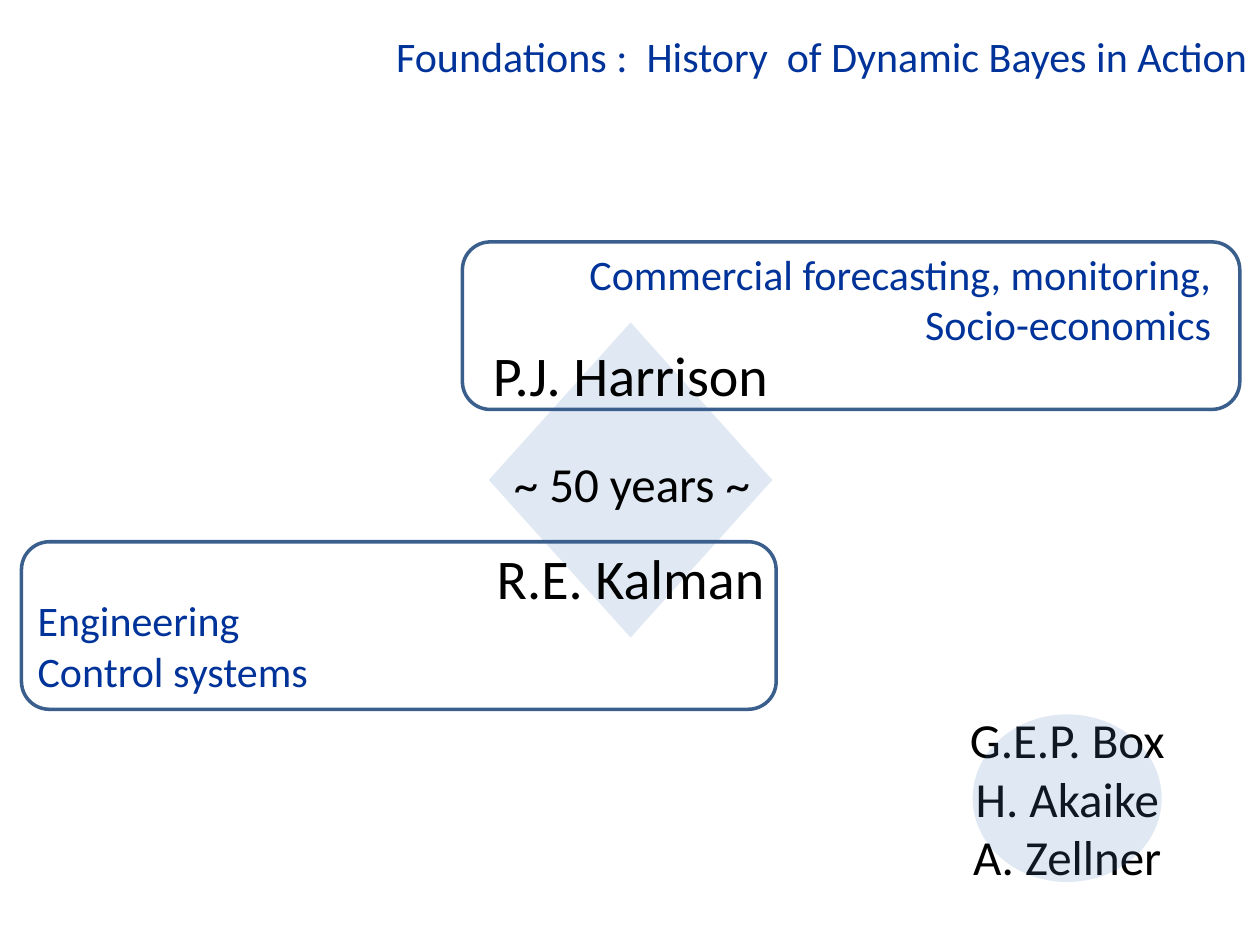
from lxml import etree
from pptx import Presentation
from pptx.dml.color import RGBColor
from pptx.enum.shapes import MSO_SHAPE
from pptx.enum.text import MSO_ANCHOR, PP_ALIGN
from pptx.oxml.ns import qn
from pptx.util import Inches, Pt

LEFT, CENTER, RIGHT = PP_ALIGN.LEFT, PP_ALIGN.CENTER, PP_ALIGN.RIGHT
TOP = MSO_ANCHOR.TOP
DIAMOND, ELLIPSE = MSO_SHAPE.DIAMOND, MSO_SHAPE.OVAL
ROUNDED = MSO_SHAPE.ROUNDED_RECTANGLE

FONT = "Calibri"
NAVY, BLACK, TINT, OUTLINE = "003399", "000000", "4F81BD", "3A5F8C"
TINT_OPACITY = 18
TITLE_ONLY = 5


def color(hex_string):
    return RGBColor.from_string(hex_string)


def inches(box):
    return [Inches(v) for v in box]


def write(tf, lines, size, hex_string, align, gap=0):
    """Fill a text frame, one paragraph per line, gap points apart."""
    tf.word_wrap = True
    tf.vertical_anchor = TOP
    for i, line in enumerate(lines):
        p = tf.paragraphs[0] if i == 0 else tf.add_paragraph()
        p.text = line
        p.alignment = align
        p.space_before = Pt(gap if i else 0)
        p.font.name = FONT
        p.font.size = Pt(size)
        p.font.color.rgb = color(hex_string)


def add_text(s, box, lines, size, hex_string, align, gap=0):
    tb = s.shapes.add_textbox(*inches(box))
    write(tb.text_frame, lines, size, hex_string, align, gap)


def add_tint(s, kind, box):
    """Add a see-through shape without a line."""
    sp = s.shapes.add_shape(kind, *inches(box))
    sp.shadow.inherit = False
    sp.fill.solid()
    sp.fill.fore_color.rgb = color(TINT)
    sp.line.fill.background()
    clr = sp.fill._xPr.find(".//" + qn("a:srgbClr"))
    etree.SubElement(clr, qn("a:alpha"), val=str(TINT_OPACITY * 1000))


def add_field(s, frame, text_box, lines, align):
    """Add a rounded outline with the fields of application in it."""
    sp = s.shapes.add_shape(ROUNDED, *inches(frame))
    sp.shadow.inherit = False
    sp.fill.background()
    sp.line.color.rgb = color(OUTLINE)
    sp.line.width = Pt(2)
    add_text(s, text_box, lines, 24, NAVY, align)


def add_title(s, box, text):
    title = s.shapes.title
    title.left, title.top, title.width, title.height = inches(box)
    write(title.text_frame, [text], 24, NAVY, RIGHT)


def add_founders(s, box):
    """Two founders above and below the span of years, over a diamond."""
    x, y, w, h = box
    add_tint(s, DIAMOND, box)
    add_text(s, (x - 0.46, y + 0.09, 3.17, 2.26),
             ["P.J. Harrison", "R.E. Kalman"], 32, BLACK, CENTER, gap=78)
    add_text(s, (x + 0.1, y + 0.99, 2.17, 0.57),
             ["~ 50 years ~"], 28, BLACK, LEFT)


def add_influences(s, box):
    x, y, w, h = box
    add_text(s, box, ["G.E.P. Box", "H. Akaike", "A. Zellner"],
             28, BLACK, CENTER)
    tint_w, tint_h = 1.5, 1.33
    add_tint(s, ELLIPSE, (x + (w - tint_w) / 2, y + (h - tint_h) / 2,
                          tint_w, tint_h))


def main():
    prs = Presentation()
    prs.slide_width, prs.slide_height = Inches(10), Inches(7.5)
    s = prs.slides.add_slide(prs.slide_layouts[TITLE_ONLY])
    add_title(s, (0, 0.19, 10, 0.5),
              "Foundations :  History  of Dynamic Bayes in Action")
    add_founders(s, (3.88, 2.56, 2.25, 2.5))
    add_field(s, (3.67, 1.92, 6.17, 1.33), (4.5, 1.92, 5.21, 1.25),
              ["Commercial forecasting, monitoring,", "Socio-economics"], RIGHT)
    add_field(s, (0.17, 4.3, 5.99, 1.33), (0.2, 4.67, 3.85, 1.25),
              ["Engineering", "Control systems"], LEFT)
    add_influences(s, (7.19, 5.58, 2.56, 1.51))
    prs.save("out.pptx")


if __name__ == "__main__":
    main()
